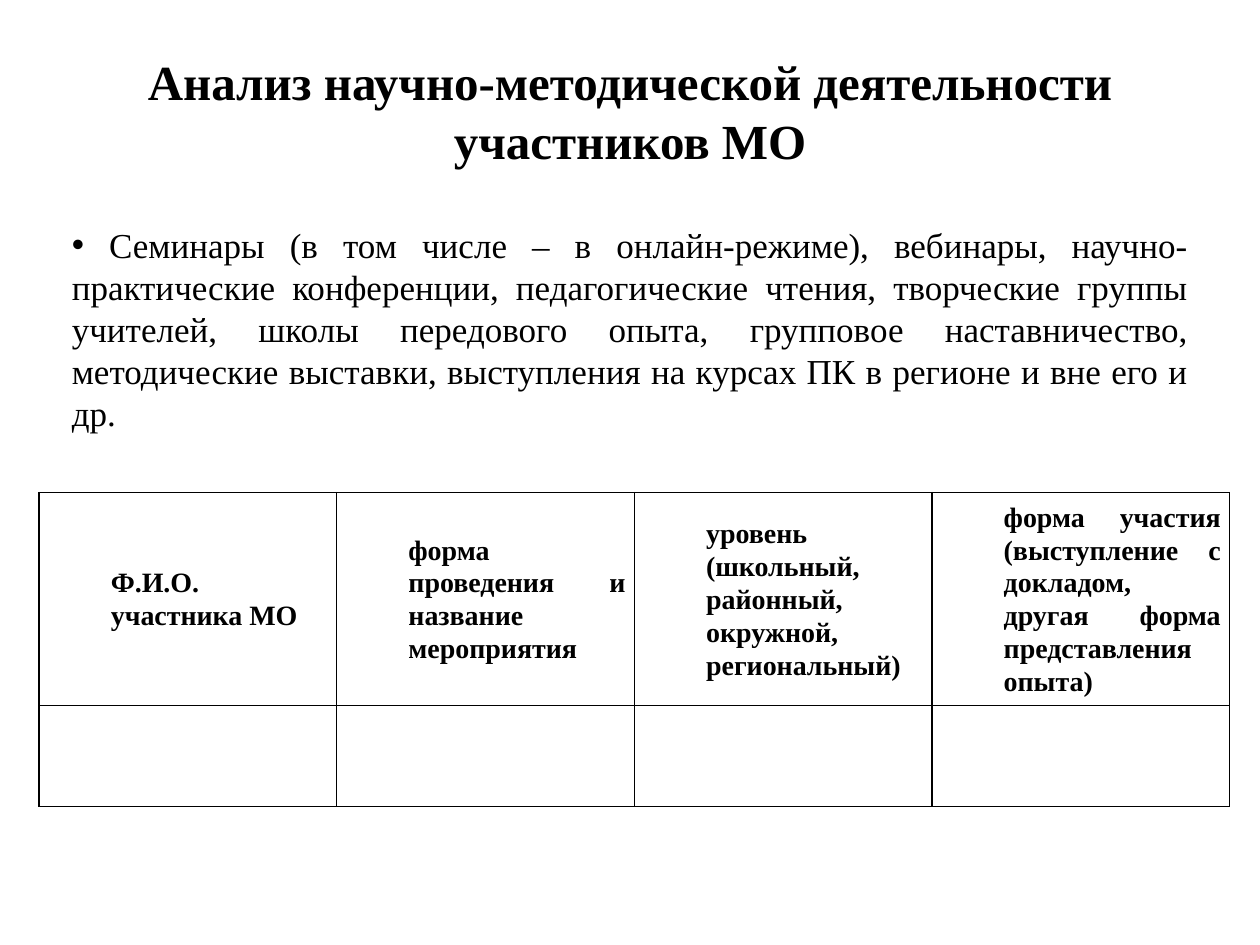
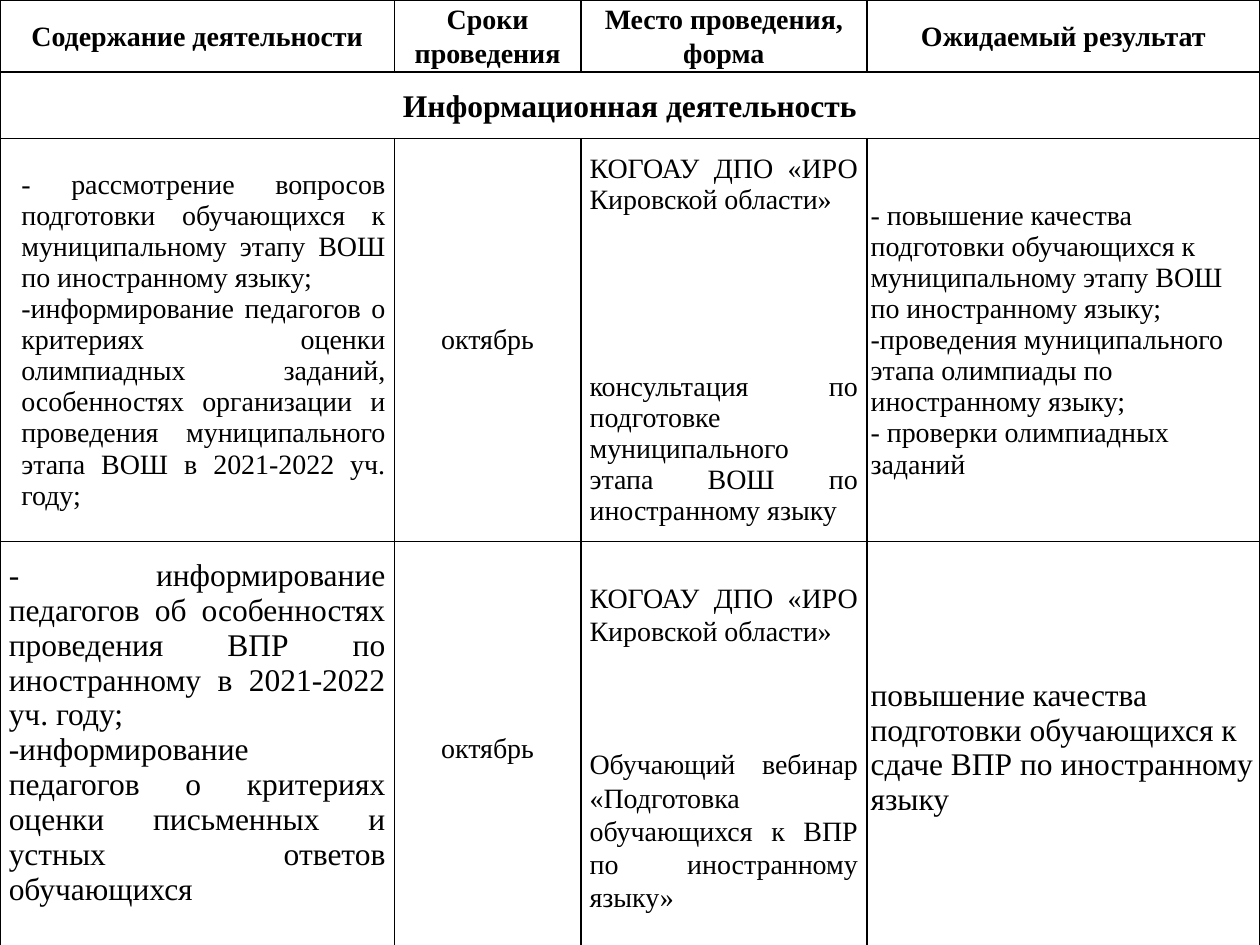
"""Builds two slides on the work of a teachers' methodical union."""
from lxml import etree
from pptx import Presentation
from pptx.dml.color import RGBColor
from pptx.enum.text import MSO_ANCHOR, MSO_AUTO_SIZE, PP_ALIGN
from pptx.oxml.ns import qn
from pptx.util import Inches, Pt

MID = MSO_ANCHOR.MIDDLE
LEFT, MID_X, JUST = PP_ALIGN.LEFT, PP_ALIGN.CENTER, PP_ALIGN.JUSTIFY
HUES = {"ink": "000000", "paper": "FFFFFF"}
INK, PAPER = (RGBColor.from_string(HUES[key]) for key in ("ink", "paper"))
FACE = "Times New Roman"


def write(frame, lines, size, bold=False, align=JUST, space=1.0, indent=0, gap=0):
    """Fill a text frame with styled lines."""
    for n, line in enumerate(lines):
        para = frame.paragraphs[0] if n == 0 else frame.add_paragraph()
        para.text = line
        para.alignment, para.line_spacing = align, space
        para.space_before = Pt(gap if n else 0)
        props = para._p.get_or_add_pPr()
        props.set("marL", str(Inches(indent)))
        props.set("indent", "0")
        font = para.font
        font.name, font.size, font.bold = FACE, Pt(size), bold
        font.color.rgb = INK


def grid(slide, left, top, cols, rows):
    """Add a white table with thin black borders."""
    box = [Inches(v) for v in (left, top, sum(cols), sum(rows))]
    table = slide.shapes.add_table(len(rows), len(cols), *box).table
    table.first_row = table.horz_banding = False
    for col, width in zip(table.columns, cols):
        col.width = Inches(width)
    for row, height in zip(table.rows, rows):
        row.height = Inches(height)
    for cell in table.iter_cells():
        props = cell._tc.get_or_add_tcPr()
        for side in ("lnL", "lnR", "lnT", "lnB"):
            edge = etree.SubElement(props, qn("a:" + side), w=str(Pt(1)))
            fill = etree.SubElement(edge, qn("a:solidFill"))
            etree.SubElement(fill, qn("a:srgbClr"), val=HUES["ink"])
        cell.fill.solid()
        cell.fill.fore_color.rgb = PAPER
        cell.vertical_anchor = MID
        cell.margin_left = cell.margin_right = Inches(0.07)
        cell.margin_top = cell.margin_bottom = 0
    return table


deck = Presentation()
deck.slide_width, deck.slide_height = Inches(10), Inches(7.5)

slide = deck.slides.add_slide(deck.slide_layouts[1])
title, body = slide.placeholders
for shape, place in ((title, (0.39, 0.25, 9.22, 1.25)),
                     (body, (0.47, 1.72, 9.06, 1.78))):
    shape.left, shape.top, shape.width, shape.height = map(Inches, place)
    shape.text_frame.auto_size = MSO_AUTO_SIZE.NONE
    shape.text_frame.vertical_anchor = MID
body.fill.solid()
body.fill.fore_color.rgb = PAPER
write(title.text_frame, ["Анализ научно-методической деятельности участников МО"],
      28, True, MID_X)
write(body.text_frame, [
    " Семинары (в том числе – в онлайн-режиме), вебинары, научно-практические "
    "конференции, педагогические чтения, творческие группы учителей, школы "
    "передового опыта, групповое наставничество, методические выставки, "
    "выступления на курсах ПК в регионе и вне его и др."], 20)

heads = ["Ф.И.О. участника МО",
         "форма проведения и название мероприятия",
         "уровень (школьный, районный, окружной, региональный)",
         "форма участия (выступление с докладом, другая форма представления опыта)"]
table = grid(slide, 0.31, 3.91, [9.45 / 4] * 4, [1.69, 0.8])
for n, head in enumerate(heads):
    write(table.cell(0, n).text_frame, [head], 16, True, space=1.06, indent=0.5)

slide = deck.slides.add_slide(deck.slide_layouts[6])
table = grid(slide, 0, 0, [3.13, 1.48, 2.27, 3.12], [0.57, 0.53, 3.2, 3.27])
heads = ["Содержание деятельности", "Сроки проведения",
         "Место проведения, форма", "Ожидаемый результат"]
for n, head in enumerate(heads):
    write(table.cell(0, n).text_frame, [head], 16, True, MID_X, 1.07)
table.cell(1, 0).merge(table.cell(1, 3))
write(table.cell(1, 0).text_frame, ["Информационная деятельность"],
      18, True, MID_X, 1.07)
for n in range(4):
    for cell in (table.cell(0, n), table.cell(1, n), table.cell(n, 3)):
        cell.margin_left = cell.margin_right = Inches(0.03)
table.cell(3, 0).margin_bottom = Inches(0.24)

host = "КОГОАУ ДПО «ИРО Кировской области»"
plans = [
    (16, 1.0, 0.1, 89,
     ["- рассмотрение вопросов подготовки обучающихся к муниципальному этапу ВОШ "
      "по иностранному языку;",
      "-информирование педагогов о критериях оценки олимпиадных заданий, "
      "особенностях организации и проведения муниципального этапа ВОШ "
      "в 2021-2022 уч. году;"],
     "консультация по подготовке муниципального этапа ВОШ по иностранному языку",
     ["- повышение качества подготовки обучающихся к муниципальному этапу ВОШ "
      "по иностранному языку;",
      "-проведения муниципального этапа олимпиады по иностранному языку;",
      "- проверки олимпиадных заданий"]),
    (18, 1.07, 0, 57,
     ["- информирование педагогов об особенностях проведения ВПР по иностранному "
      "в 2021-2022 уч. году;",
      "-информирование педагогов о критериях оценки письменных и устных ответов "
      "обучающихся"],
     "Обучающий вебинар «Подготовка обучающихся к ВПР по иностранному языку»",
     ["повышение качества",
      "подготовки обучающихся к сдаче ВПР по иностранному языку"]),
]
for n, (size, space, indent, gap, tasks, form, goals) in enumerate(plans, 2):
    task, term, place, goal = (table.cell(n, k).text_frame for k in range(4))
    write(task, tasks, size, indent=indent)
    write(term, ["октябрь"], 16, align=MID_X, space=space)
    write(place, [host, form], 16, space=space, gap=gap)
    write(goal, goals, size, align=LEFT)

deck.save("out.pptx")
